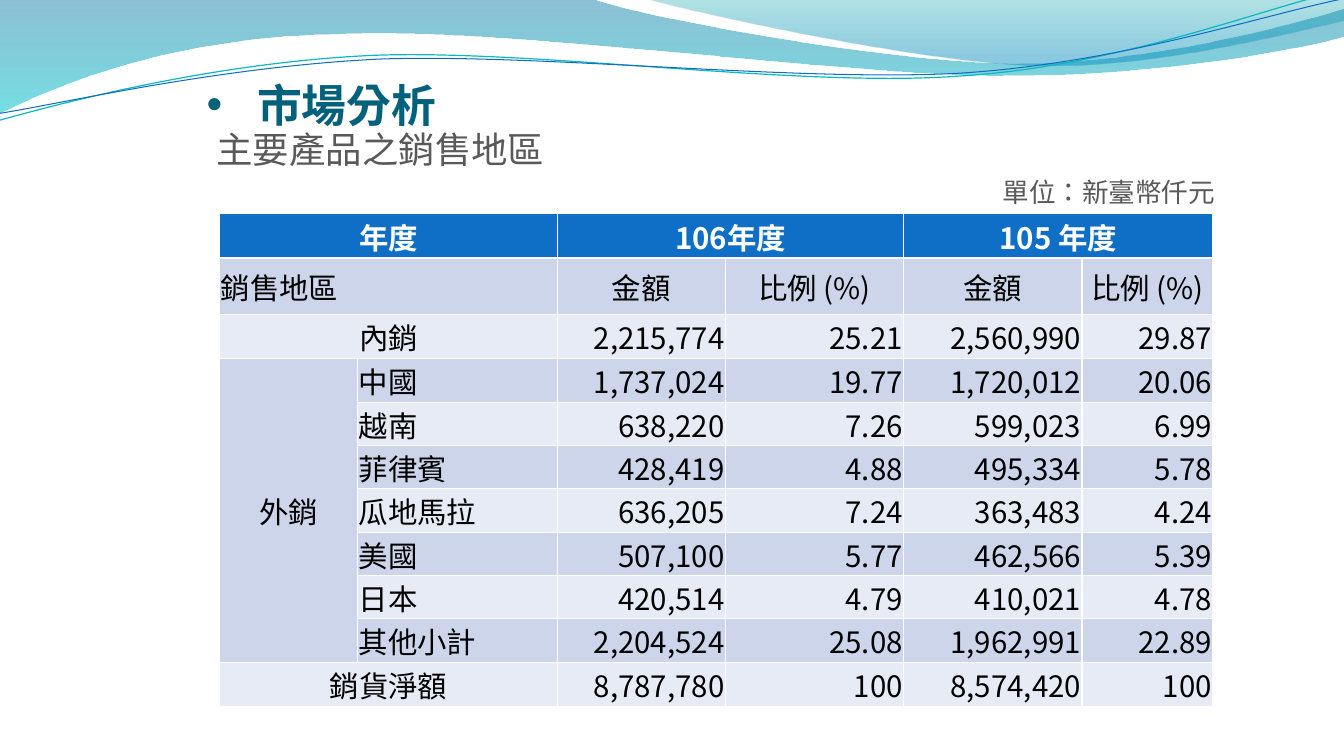
import lxml.etree
import pptx
import pptx.dml.color
import pptx.enum.text
import pptx.oxml
import pptx.oxml.ns
import pptx.util

Inches = pptx.util.Inches
Pt = pptx.util.Pt
RGBColor = pptx.dml.color.RGBColor
ALIGN = pptx.enum.text.PP_ALIGN
ANCHOR = pptx.enum.text.MSO_ANCHOR
qn = pptx.oxml.ns.qn

FONT = "Noto Sans CJK SC"
WHITE = RGBColor(0xFF, 0xFF, 0xFF)
BLACK = RGBColor(0, 0, 0)
GREY = RGBColor(0x59, 0x59, 0x59)
TITLE_TEAL = RGBColor(0x04, 0x61, 0x7B)
BLUE = RGBColor(0x0F, 0x6F, 0xC6)
AQUA = RGBColor(0x0A, 0xB8, 0xBF)
BAND_DARK = RGBColor(0xCC, 0xD5, 0xEA)
BAND_LIGHT = RGBColor(0xE7, 0xEB, 0xF5)
LEFT_TOP = RGBColor(0x00, 0x74, 0xA1)
LEFT_BOTTOM = RGBColor(0x00, 0xC6, 0xCF)
RIGHT_TOP = RGBColor(0x00, 0xA1, 0xA9)
RIGHT_BOTTOM = RGBColor(0x00, 0x8B, 0xBF)

COLUMN_WIDTHS = [1.37, 1.98, 1.67, 1.77, 1.77, 1.3]
ROW_HEIGHTS = [0.44, 0.56, 0.44] + [0.43] * 7 + [0.44]
SALES = [
    ["年度", "", "106年度", "", "105 年度", ""],
    ["銷售地區", "", "金額", "比例 (%)", "金額", "比例 (%)"],
    ["內銷", "", "2,215,774", "25.21", "2,560,990", "29.87"],
    ["外銷", "中國", "1,737,024", "19.77", "1,720,012", "20.06"],
    ["", "越南", "638,220", "7.26", "599,023", "6.99"],
    ["", "菲律賓", "428,419", "4.88", "495,334", "5.78"],
    ["", "瓜地馬拉", "636,205", "7.24", "363,483", "4.24"],
    ["", "美國", "507,100", "5.77", "462,566", "5.39"],
    ["", "日本", "420,514", "4.79", "410,021", "4.78"],
    ["", "其他小計", "2,204,524", "25.08", "1,962,991", "22.89"],
    ["銷貨淨額", "", "8,787,780", "100", "8,574,420", "100"],
]
MERGES = [(0, 0, 0, 1), (0, 2, 0, 3), (0, 4, 0, 5), (1, 0, 1, 1),
          (2, 0, 2, 1), (3, 0, 9, 0), (10, 0, 10, 1)]


def draw_path(slide, left, top, path, closed):
    """Draw a path of points and six-number Bezier segments, in inches."""
    points = [(left + Inches(x), top + Inches(y))
              for segment in path for x, y in zip(segment[::2], segment[1::2])]
    builder = slide.shapes.build_freeform(*points[0], scale=1.0)
    builder.add_line_segments(points[1:], close=closed)
    shape = builder.convert_to_shape()
    shape.shadow.inherit = False
    steps = iter(list(shape.element.iter(qn("a:lnTo"))))
    for segment in path[1:]:
        first = next(steps)
        if len(segment) == 6:
            curve = lxml.etree.Element(qn("a:cubicBezTo"))
            first.addprevious(curve)
            for step in (first, next(steps), next(steps)):
                curve.append(step[0])
                step.getparent().remove(step)
    return shape


def add_wave(slide, left, top, path, stops):
    """Add a translucent wave with a gradient running downwards."""
    wave = draw_path(slide, left, top, path, True)
    wave.line.fill.background()
    wave.fill.background()
    gradient = lxml.etree.Element(qn("a:gradFill"), rotWithShape="1")
    stop_list = lxml.etree.SubElement(gradient, qn("a:gsLst"))
    for position, color, alpha in stops:
        stop = lxml.etree.SubElement(stop_list, qn("a:gs"), pos=str(position * 1000))
        tint = lxml.etree.SubElement(stop, qn("a:srgbClr"), val=str(color))
        lxml.etree.SubElement(tint, qn("a:alpha"), val=str(alpha * 1000))
    lxml.etree.SubElement(gradient, qn("a:lin"), ang="5400000", scaled="0")
    properties = wave.element.spPr
    properties.replace(properties.find(qn("a:noFill")), gradient)


def add_header_waves(slide, left, top):
    """Add the two waves and two thin tilted curves across the top."""
    add_wave(slide, left, top, [
        (0, 0), (5.87, -0.01), (6.34, 0.17, 8.85, 0.63, 10.11, 0.63),
        (11.38, 0.63, 12.78, 0.26, 13.33, 0.09), (13.35, 0.36),
        (13.11, 0.44, 11.6, 0.76, 9.94, 0.75), (8.29, 0.75, 5.09, 0.28, 3.43, 0.34),
        (1.72, 0.36, 0.61, 0.83, -0.01, 1.13),
    ], [(0, LEFT_TOP, 45), (100, LEFT_BOTTOM, 55)])
    add_wave(slide, left, top, [
        (6.39, -0.01), (6.79, 0.11, 9.09, 0.62, 10.25, 0.65),
        (11.41, 0.69, 12.82, 0.32, 13.33, 0.21), (13.33, 0),
    ], [(0, RIGHT_TOP, 30), (80, RIGHT_BOTTOM, 45)])
    curves = [
        (AQUA, 0.85, [(-0.03, 0.88), (0.63, 0.73, 2.11, 0.41, 3.69, 0.41),
                      (5.28, 0.42, 7.88, 0.93, 9.49, 0.89),
                      (11.09, 0.87, 12.54, 0.36, 13.33, 0.22)]),
        (BLUE, 0.75, [(-0.02, 0.81), (0.62, 0.74, 2.18, 0.45, 3.78, 0.45),
                      (5.37, 0.47, 7.95, 0.88, 9.54, 0.86),
                      (11.14, 0.83, 12.56, 0.42, 13.36, 0.3)]),
    ]
    for color, weight, path in curves:
        curve = draw_path(slide, left, top, path, False)
        curve.rotation = 357.3
        curve.fill.background()
        curve.line.color.rgb = color
        curve.line.width = Pt(weight)


def write(paragraph, text, size, color, bold=False, align=ALIGN.LEFT):
    """Set a paragraph's text and format its runs."""
    paragraph.text = text
    paragraph.alignment = align
    for run in paragraph.runs:
        run.font.size = Pt(size)
        run.font.bold = bold
        run.font.color.rgb = color
        run.font.name = FONT
        properties = run._r.get_or_add_rPr()
        properties.set("lang", "zh-TW")
        lxml.etree.SubElement(properties, qn("a:ea"), typeface=FONT)


def add_title(slide, left, top, width, height):
    """Add the bulleted slide title."""
    frame = slide.shapes.add_textbox(left, top, width, height).text_frame
    frame.word_wrap = True
    frame.vertical_anchor = ANCHOR.MIDDLE
    frame.margin_left = frame.margin_right = frame.margin_bottom = 0
    title = frame.paragraphs[0]
    write(title, "市場分析", 32, TITLE_TEAL, bold=True)
    properties = title._p.get_or_add_pPr()
    properties.set("marL", str(Inches(0.5)))
    properties.set("indent", str(-Inches(0.5)))
    lxml.etree.SubElement(properties, qn("a:buFont"), typeface="Arial")
    lxml.etree.SubElement(properties, qn("a:buChar"), char="•")


def add_subtitle(slide, left, top, width, height):
    """Add the table heading and its unit."""
    frame = slide.shapes.add_textbox(left, top, width, height).text_frame
    frame.word_wrap = True
    write(frame.paragraphs[0], "主要產品之銷售地區", 26, GREY)
    unit = frame.add_paragraph()
    write(unit, "單位：新臺幣仟元", 19, GREY, align=ALIGN.RIGHT)
    unit.space_before = Pt(3.8)


def format_cell(cell, row, column):
    """Style one cell by its place in the table."""
    cell.vertical_anchor = ANCHOR.MIDDLE
    cell.margin_left = cell.margin_right = cell.margin_top = Inches(0.01)
    cell.margin_bottom = 0
    properties = cell._tc.get_or_add_tcPr()
    for side in "LRTB":
        heavy = (row, side) in ((0, "B"), (1, "T"))
        border = lxml.etree.SubElement(
            properties, qn("a:ln" + side), w=str(Pt(1.5 if heavy else 1)))
        fill = lxml.etree.SubElement(border, qn("a:solidFill"))
        lxml.etree.SubElement(fill, qn("a:srgbClr"), val=str(WHITE))
    cell.fill.solid()
    cell.fill.fore_color.rgb = BLUE if row == 0 else BAND_DARK if row % 2 else BAND_LIGHT
    if not SALES[row][column]:
        return
    if (row, column) == (1, 0) or (row > 1 and column == 1):
        align = ALIGN.LEFT
    else:
        align = ALIGN.RIGHT if row > 1 and column > 1 else ALIGN.CENTER
    write(cell.text_frame.paragraphs[0], SALES[row][column], 21,
          WHITE if row == 0 else BLACK, bold=row == 0, align=align)


def add_sales_table(slide, left, top, width, height):
    """Add the table of sales by region."""
    table = slide.shapes.add_table(
        len(SALES), len(COLUMN_WIDTHS), left, top, width, height).table
    for column, size in zip(table.columns, COLUMN_WIDTHS):
        column.width = int(width * size / sum(COLUMN_WIDTHS))
    for row, size in zip(table.rows, ROW_HEIGHTS):
        row.height = int(height * size / sum(ROW_HEIGHTS))
    for first_row, first_column, last_row, last_column in MERGES:
        table.cell(first_row, first_column).merge(table.cell(last_row, last_column))
    for row, values in enumerate(SALES):
        for column in range(len(values)):
            format_cell(table.cell(row, column), row, column)


def main():
    """Build and save the market analysis slide."""
    deck = pptx.Presentation()
    deck.slide_width, deck.slide_height = Inches(13.33), Inches(7.5)
    slide = deck.slides.add_slide(deck.slide_layouts[6])
    add_header_waves(slide, 0, 0)
    add_title(slide, Inches(2.05), Inches(0.57), Inches(10.02), Inches(0.88))
    add_subtitle(slide, Inches(2.05), Inches(1.21), Inches(10.1), Inches(0.95))
    add_sales_table(slide, Inches(2.18), Inches(2.12), Inches(9.85), Inches(4.89))
    deck.save("out.pptx")


if __name__ == "__main__":
    main()
